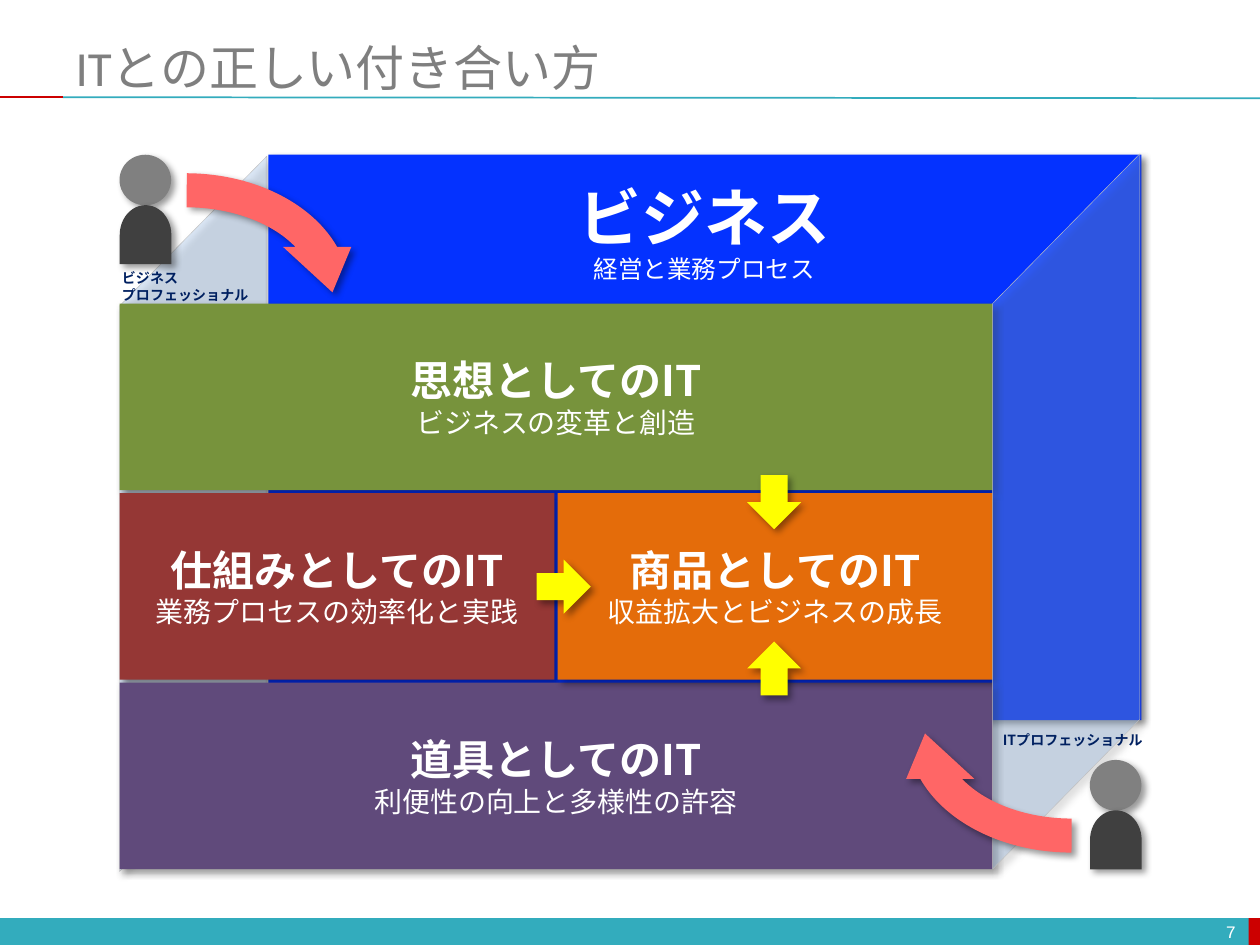
"""Build the slide on how business and IT professionals should work with IT."""
from lxml import etree
from pptx import Presentation
from pptx.dml.color import RGBColor
from pptx.enum.shapes import MSO_CONNECTOR, MSO_SHAPE
from pptx.enum.text import MSO_ANCHOR, PP_ALIGN
from pptx.oxml.ns import qn
from pptx.util import Cm, Pt

RECTANGLE, OVAL = MSO_SHAPE.RECTANGLE, MSO_SHAPE.OVAL
BODY, DOWN_ARROW = MSO_SHAPE.FLOWCHART_DELAY, MSO_SHAPE.DOWN_ARROW
CIRCULAR_ARROW = MSO_SHAPE.CIRCULAR_ARROW
STRAIGHT = MSO_CONNECTOR.STRAIGHT
LEFT, CENTER, RIGHT = PP_ALIGN.LEFT, PP_ALIGN.CENTER, PP_ALIGN.RIGHT
TOP, MIDDLE = MSO_ANCHOR.TOP, MSO_ANCHOR.MIDDLE

COLORS = {
    "teal": "33ACBD", "red": "CC0000", "title": "7F7F7F", "white": "FFFFFF",
    "blue": "0432FF", "green": "77933C", "brown": "953735", "purple": "604A7B",
    "orange": "E46C0A", "head": "808080", "body": "404040", "navy": "002060",
    "pink": "FF6666", "yellow": "FFFF00", "glass": "8EB4E3", "edge": "BFBFBF",
    "black": "000000",
}
FONT = "Noto Sans CJK JP"
TITLE = "ITとの正しい付き合い方"

GRID_LEFT, GRID_TOP, GRID_WIDTH = 2.41, 6.12, 17.6
ROW_HEIGHT, GAP = 3.76, 0.06
HALF_WIDTH = (GRID_WIDTH - GAP) / 2
DEPTH, RISE, SIDE_HEIGHT = 2.97, 3.02, 11.4

BLOCKS = [
    (0, 0, 2, "green", "思想としてのIT", "ビジネスの変革と創造"),
    (1, 0, 1, "brown", "仕組みとしてのIT", "業務プロセスの効率化と実践"),
    (2, 0, 2, "purple", "道具としてのIT", "利便性の向上と多様性の許容"),
    (1, 1, 1, "orange", "商品としてのIT", "収益拡大とビジネスの成長"),
]
BUSINESS = [("ビジネス", 36, True), ("経営と業務プロセス", 14, False)]
BUSINESS_LABEL = [("ビジネス", 8, True), ("プロフェッショナル", 8, True)]
IT_LABEL = [("ITプロフェッショナル", 8, True)]
RULES = [((1.27, 1.96), (25.4, 1.98), "teal"), ((0, 1.96), (1.27, 1.96), "red")]
FOOTER_BARS = [(0, 25.4, "teal"), (25.17, 0.23, "red")]
FLOW_ARROWS = [(15.06, 9.58, 0), (10.82, 11.28, 270), (15.06, 12.93, 180)]


def color(name):
    return RGBColor.from_string(COLORS[name])


def add_shadow(shape):
    shape.shadow.inherit = False
    effects = shape._element.spPr.find(qn("a:effectLst"))
    outer = etree.SubElement(
        effects, qn("a:outerShdw"), blurRad=str(Pt(4)), dist=str(Pt(3)),
        dir=str(45 * 60000), algn="tl", rotWithShape="0")
    tint = etree.SubElement(outer, qn("a:srgbClr"), val=COLORS["black"])
    etree.SubElement(tint, qn("a:alpha"), val="40000")


def add_block(slide, kind, box, fill, rotation=0, shadow=True):
    shape = slide.shapes.add_shape(kind, *map(Cm, box))
    shape.rotation = rotation
    shape.fill.solid()
    shape.fill.fore_color.rgb = color(fill)
    shape.line.fill.background()
    shape.shadow.inherit = False
    if shadow:
        add_shadow(shape)
    return shape


def add_run(paragraph, text, size, ink, bold=False, font=FONT):
    run = paragraph.add_run()
    run.text = text
    run.font.size = Pt(size)
    run.font.bold = bold
    run.font.color.rgb = color(ink)
    run.font.name = font
    etree.SubElement(run._r.get_or_add_rPr(), qn("a:ea"), typeface=FONT)


def write_lines(shape, lines, ink, align, anchor, font=FONT):
    frame = shape.text_frame
    frame.vertical_anchor = anchor
    for index, (text, size, bold) in enumerate(lines):
        paragraph = frame.add_paragraph() if index else frame.paragraphs[0]
        paragraph.alignment = align
        add_run(paragraph, text, size, ink, bold, font)


def add_label(slide, box, lines, ink, align, anchor=TOP, font=FONT):
    label = slide.shapes.add_textbox(*map(Cm, box))
    label.text_frame.word_wrap = False
    write_lines(label, lines, ink, align, anchor, font)


def add_side_panel(slide, left, top):
    points = [(left, top + RISE), (left + DEPTH, top),
              (left + DEPTH, top + SIDE_HEIGHT),
              (left, top + RISE + SIDE_HEIGHT)]
    corners = [(Cm(x), Cm(y)) for x, y in points]
    builder = slide.shapes.build_freeform(*corners[0])
    builder.add_line_segments(corners[1:], close=True)
    panel = builder.convert_to_shape()
    panel.fill.solid()
    panel.fill.fore_color.rgb = color("glass")
    tint = panel._element.spPr.find(qn("a:solidFill"))[0]
    etree.SubElement(tint, qn("a:alpha"), val="31000")
    panel.line.color.rgb = color("edge")
    panel.line.width = Pt(0.25)
    add_shadow(panel)


def add_person(slide, left, top):
    add_block(slide, OVAL, (left, top, 1.04, 1.02), "head")
    add_block(slide, BODY, (left - 0.07, top + 1.09, 1.19, 1.04), "body", 270)


def add_curved_arrow(slide, left, top, rotation, start):
    arrow = add_block(slide, CIRCULAR_ARROW, (left, top, 7.29, 5.49), "pink", rotation)
    for index, value in enumerate((0.125, 11.42, 204.58, start, 0.125)):
        arrow.adjustments[index] = value


def add_frame(slide):
    for left, width, fill in FOOTER_BARS:
        add_block(slide, RECTANGLE, (left, 18.51, width, 0.54), fill, shadow=False)
    for begin, end, ink in RULES:
        rule = slide.shapes.add_connector(STRAIGHT, *map(Cm, begin + end))
        rule.line.color.rgb = color(ink)
        rule.line.width = Pt(1)
        etree.SubElement(rule._element.spPr, qn("a:effectLst"))
    title = slide.shapes.title
    title.left, title.top, title.width, title.height = map(Cm, (1.27, 0.76, 24.13, 1.17))
    write_lines(title, [(TITLE, 28, False)], "title", LEFT, MIDDLE, "Calibri")
    add_label(slide, (19.25, 18.47, 5.92, 0.61), [("7", 10, False)],
              "white", RIGHT, MIDDLE, "Courier New")


def add_diagram(slide):
    add_side_panel(slide, GRID_LEFT, 3.15)
    add_block(slide, RECTANGLE, (5.41, 3.12, GRID_WIDTH, SIDE_HEIGHT), "blue")
    for row, column, span, fill, heading, detail in BLOCKS:
        box = (GRID_LEFT + column * (HALF_WIDTH + GAP),
               GRID_TOP + row * (ROW_HEIGHT + GAP),
               span * HALF_WIDTH + (span - 1) * GAP, ROW_HEIGHT)
        block = add_block(slide, RECTANGLE, box, fill)
        write_lines(block, [(heading, 24, True), (detail, 16, False)],
                    "white", CENTER, MIDDLE)
    add_label(slide, (11.38, 3.48, 5.64, 2.39), BUSINESS, "white", CENTER)
    add_person(slide, GRID_LEFT, 3.12)
    add_label(slide, (2.21, 5.31, 3.07, 0.94), BUSINESS_LABEL, "navy", LEFT)
    add_curved_arrow(slide, 0.1, 3.15, 0, 162.33)
    add_side_panel(slide, GRID_LEFT + GRID_WIDTH, 3.1)
    add_person(slide, 21.97, 15.32)
    add_label(slide, (19.89, 14.63, 3.4, 0.61), IT_LABEL, "navy", RIGHT)
    add_curved_arrow(slide, 17.96, 12.04, 180, 162.08)
    for left, top, rotation in FLOW_ARROWS:
        add_block(slide, DOWN_ARROW, (left, top, 1.09, 1.09), "yellow", rotation)


def main():
    presentation = Presentation()
    presentation.slide_width, presentation.slide_height = Cm(25.4), Cm(19.05)
    slide = presentation.slides.add_slide(presentation.slide_layouts[5])
    add_frame(slide)
    add_diagram(slide)
    presentation.save("out.pptx")


if __name__ == "__main__":
    main()
